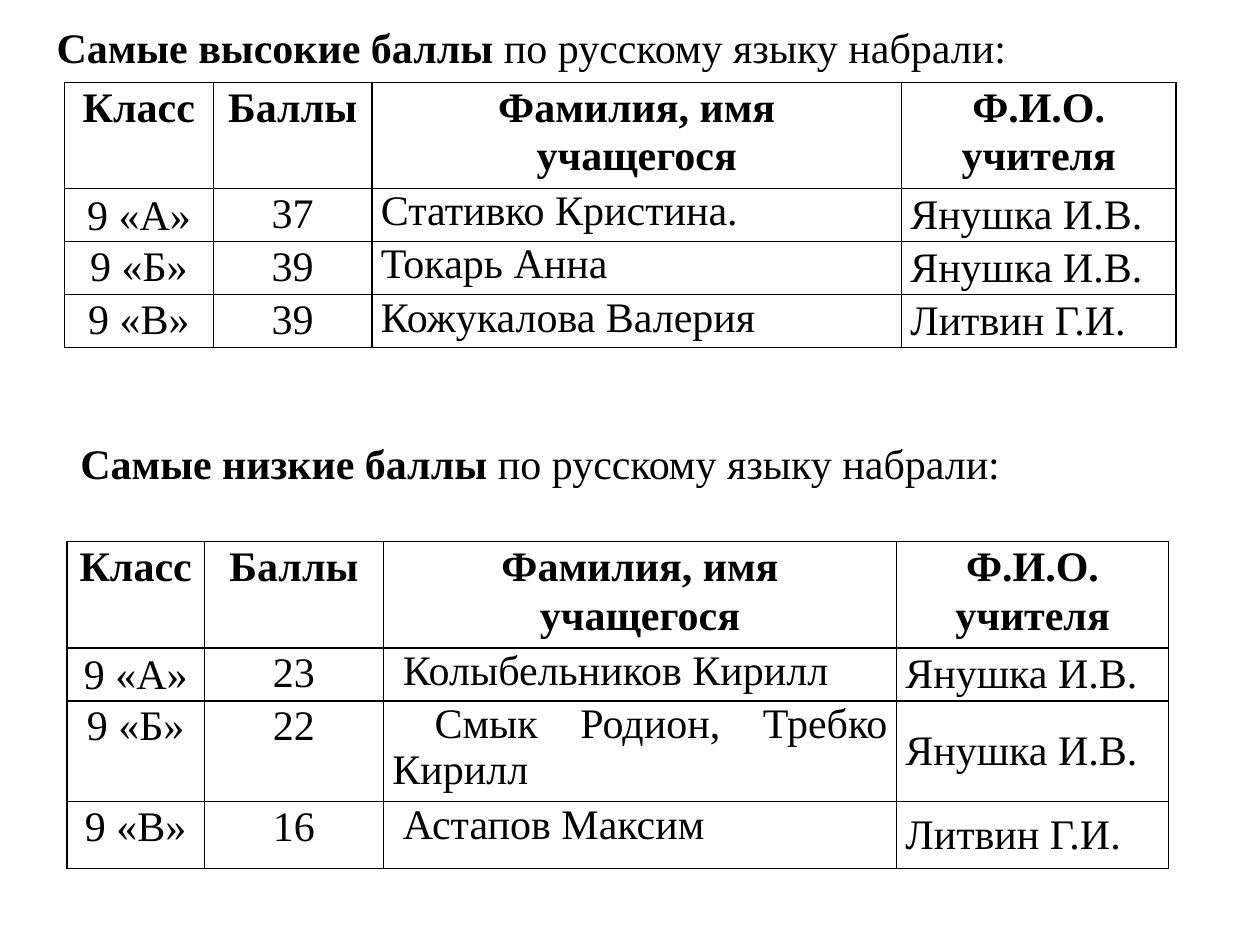
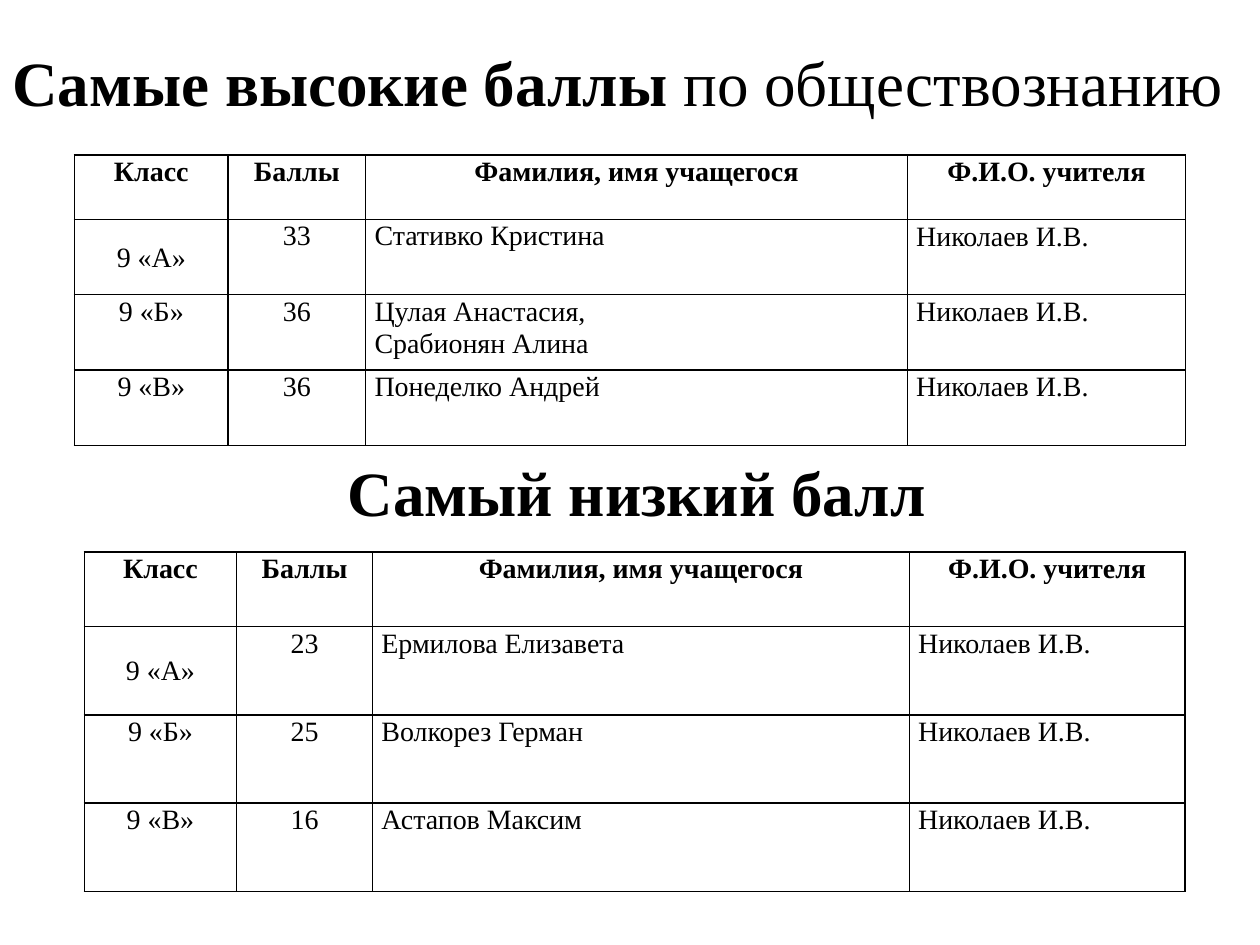
from lxml import etree
from pptx import Presentation
from pptx import util as u
from pptx.dml.color import RGBColor
from pptx.enum import text
from pptx.oxml.ns import qn

# Shared style
COLORS = {"ink": "000000", "paper": "FFFFFF"}
FONT = "Times New Roman"
AL, ANC = text.PP_ALIGN, text.MSO_ANCHOR
CELL_INSETS = {"margin_left": u.Cm(0.18), "margin_right": u.Cm(0.18),
               "margin_top": 0, "margin_bottom": 0}
CLASSES = ["9 «А»", "9 «Б»", "9 «В»"]
RUSSIAN_HEAD = ["Класс", "Баллы", "Фамилия, имя\nучащегося", "Ф.И.О. учителя"]
SOCIAL_HEAD = ["Класс", "Баллы", "Фамилия, имя учащегося", "Ф.И.О. учителя"]
RUSSIAN_TEACHERS = ["Янушка И.В.", "Янушка И.В.", "Литвин Г.И."]
SOCIAL_TEACHERS = ["Николаев И.В."] * 3

# Content: lengths in cm, sizes in points; indents are for the pupils' names
SLIDES = [
    {"head": RUSSIAN_HEAD, "teachers": RUSSIAN_TEACHERS,
     "title_size": 24, "size": 24, "name_spacing": 1.0,
     "teacher_spacing": 1.0, "teacher_anchor": ANC.MIDDLE,
     "parts": [
         {"title": ("Самые высокие баллы ", "по русскому языку набрали:"),
          "title_at": (0.89, 0.3, 23.6, 1.27),
          "at": (1.3, 1.66), "cols": [3.0, 3.2, 10.67, 5.54],
          "rows": [2.14, 1.07, 1.07, 1.07], "indents": [0, 0, 0],
          "scores": [37, 39, 39],
          "names": ["Стативко Кристина.", "Токарь Анна", "Кожукалова Валерия"]},
         {"title": ("Самые низкие баллы ", "по русскому языку набрали:"),
          "title_at": (1.37, 8.69, 22.2, 1.27),
          "at": (1.35, 10.92), "cols": [2.77, 3.61, 10.34, 5.49],
          "rows": [2.14, 1.06, 2.03, 1.35], "indents": [0.21, 0.85, 0.21],
          "scores": [23, 22, 16],
          "names": ["Колыбельников Кирилл", "Смык Родион, Требко Кирилл",
                    "Астапов Максим"]},
     ]},
    {"head": SOCIAL_HEAD, "teachers": SOCIAL_TEACHERS,
     "title_size": 36, "size": 16, "name_spacing": 1.05,
     "teacher_spacing": 1.06, "teacher_anchor": ANC.TOP,
     "parts": [
         {"title": ("Самые высокие баллы ", "по обществознанию"),
          "title_at": (0, 0.76, 25.1, 1.8),
          "at": (1.5, 3.12), "cols": [3.1, 2.77, 10.92, 5.61],
          "rows": [1.3, 1.52, 1.52, 1.52], "indents": [0, 0, 0],
          "scores": [33, 36, 36],
          "names": ["Стативко Кристина", "Цулая Анастасия,\nСрабионян Алина",
                    "Понеделко Андрей"]},
         {"title": ("Самый низкий балл",),
          "title_at": (6.76, 9.02, 12.6, 1.8),
          "at": (1.7, 11.13), "cols": [3.07, 2.74, 10.82, 5.56],
          "rows": [1.5, 1.78, 1.78, 1.78], "indents": [0, 0, 0],
          "scores": [23, 25, 16],
          "names": ["Ермилова Елизавета", "Волкорез Герман", "Астапов Максим"]},
     ]},
]


def set_all(obj, values):
    for name, value in values.items():
        setattr(obj, name, value)


def add_run(p, words, size, bold):
    r = p.add_run()
    r.text = words
    set_all(r.font, {"name": FONT, "size": u.Pt(size), "bold": bold})
    r.font.color.rgb = RGBColor.from_string(COLORS["ink"])


def add_title(s, part, size):
    sp = s.shapes.add_textbox(*map(u.Cm, part["title_at"]))
    sp.text_frame.word_wrap = True
    p = sp.text_frame.paragraphs[0]
    for i, words in enumerate(part["title"]):
        add_run(p, words, size, bold=i == 0)


def add_borders(cell):
    tc_pr = cell._tc.get_or_add_tcPr()
    for i, side in enumerate(("lnL", "lnR", "lnT", "lnB")):
        ln = etree.Element(qn(f"a:{side}"), w=str(u.Pt(1)))
        fill = etree.SubElement(ln, qn("a:solidFill"))
        etree.SubElement(fill, qn("a:srgbClr"), val=COLORS["ink"])
        tc_pr.insert(i, ln)


def fill_cell(cell, words, size, bold, align, spacing, anchor, indent=0):
    set_all(cell, {**CELL_INSETS, "vertical_anchor": anchor})
    cell.fill.solid()
    cell.fill.fore_color.rgb = RGBColor.from_string(COLORS["paper"])
    add_borders(cell)
    tf = cell.text_frame
    for i, line in enumerate(words.split("\n")):
        p = tf.add_paragraph() if i else tf.paragraphs[0]
        set_all(p, {"alignment": align, "line_spacing": spacing})
        if indent:
            p._p.get_or_add_pPr().set("indent", str(u.Cm(indent)))
        add_run(p, line, size, bold)


def add_results(s, page, part):
    cols, rows = part["cols"], part["rows"]
    box = (*part["at"], sum(cols), sum(rows))
    table = s.shapes.add_table(len(rows), len(cols), *map(u.Cm, box)).table
    set_all(table, {"first_row": False, "horz_banding": False})
    for col, width in zip(table.columns, cols):
        col.width = u.Cm(width)
    for row, height in zip(table.rows, rows):
        row.height = u.Cm(height)

    # Header row
    size = page["size"]
    for c, words in enumerate(page["head"]):
        fill_cell(table.cell(0, c), words, size, True, AL.CENTER, 1.05, ANC.TOP)

    # One row per class
    body = zip(CLASSES, part["scores"], part["names"], page["teachers"], part["indents"])
    for r, (group, score, name, teacher, indent) in enumerate(body, 1):
        group_anchor = ANC.MIDDLE if r == 1 else ANC.TOP
        formats = [
            (group, AL.CENTER, 1.05, group_anchor),
            (str(score), AL.CENTER, 1.05, ANC.TOP),
            (name, AL.JUSTIFY, page["name_spacing"], ANC.TOP, indent),
            (teacher, AL.LEFT, page["teacher_spacing"], page["teacher_anchor"]),
        ]
        for c, (words, *layout) in enumerate(formats):
            fill_cell(table.cell(r, c), words, size, False, *layout)


def main():
    prs = Presentation()
    set_all(prs, {"slide_width": u.Cm(25.4), "slide_height": u.Cm(19.05)})
    for page in SLIDES:
        s = prs.slides.add_slide(prs.slide_layouts[6])
        for part in page["parts"]:
            add_title(s, part, page["title_size"])
            add_results(s, page, part)
    prs.save("out.pptx")


if __name__ == "__main__":
    main()
